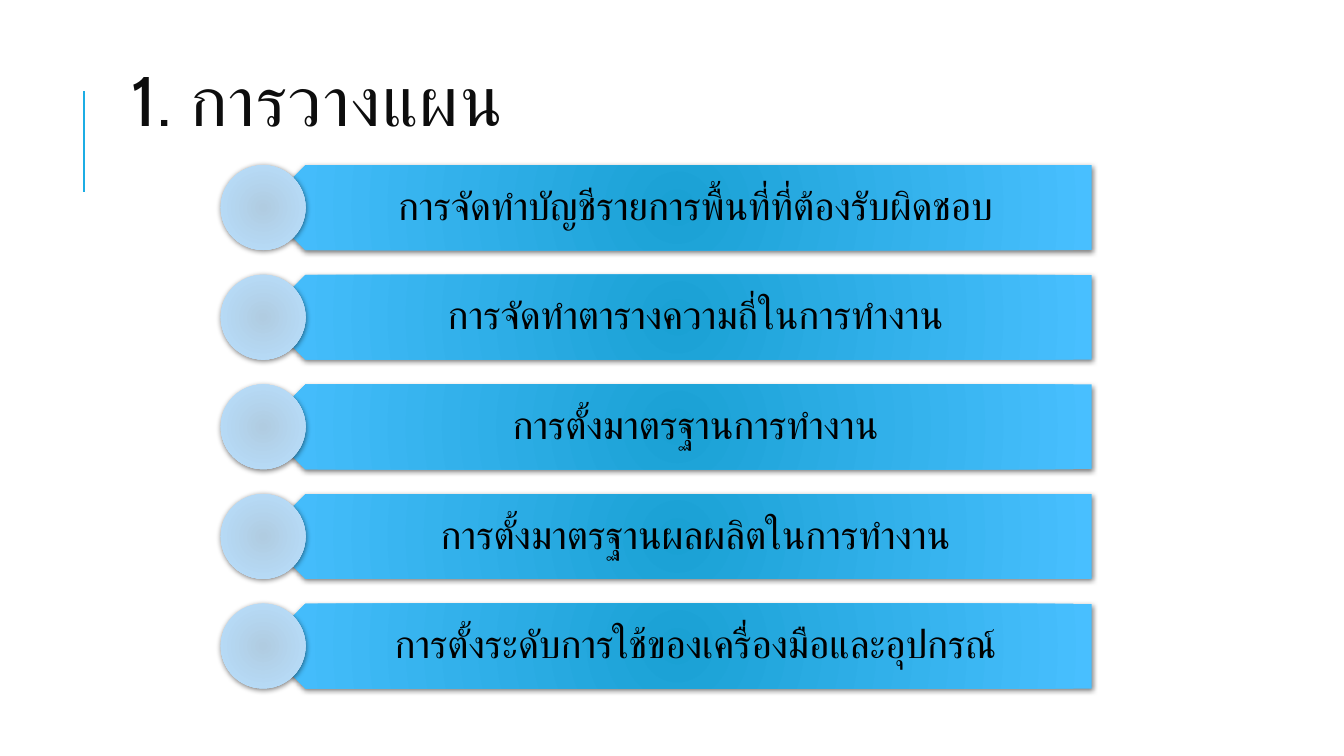
"""Build the planning slide: a title and five labelled arrow bars."""
from lxml.etree import SubElement
from pptx import Presentation
from pptx.dml.color import RGBColor
from pptx.enum.shapes import MSO_CONNECTOR, MSO_SHAPE
from pptx.enum.text import MSO_ANCHOR, PP_ALIGN
from pptx.oxml.ns import qn
from pptx.util import Pt

ACCENT = RGBColor(0x1C, 0xAD, 0xE4)
TITLE = RGBColor(0x0D, 0x0D, 0x0D)
BLACK = RGBColor(0, 0, 0)
BAR = (RGBColor(0x1A, 0xA1, 0xD4), RGBColor(0x48, 0xBF, 0xFF))
DOT = (RGBColor(0xB0, 0xCC, 0xE1), RGBColor(0xB9, 0xE0, 0xFF))

STEPS = [
    "การจัดทำบัญชีรายการพื้นที่ที่ต้องรับผิดชอบ",
    "การจัดทำตารางความถี่ในการทำงาน",
    "การตั้งมาตรฐานการทำงาน",
    "การตั้งมาตรฐานผลผลิตในการทำงาน",
    "การตั้งระดับการใช้ของเครื่องมือและอุปกรณ์",
]
TOP, PITCH, HEIGHT = 118, 78.3, 60.6


def add_glow_shape(kind, left, top, width, colors):
    sp = s.shapes.add_shape(kind, Pt(left), Pt(top), Pt(width), Pt(HEIGHT))
    sp.line.fill.background()
    sp.fill.gradient()
    for stop, color in zip(sp.fill.gradient_stops, colors):
        stop.color.rgb = color
    grad = sp._element.spPr.find(qn("a:gradFill"))
    grad.remove(grad.find(qn("a:lin")))
    path = SubElement(grad, qn("a:path"), {"path": "circle"})
    SubElement(path, qn("a:fillToRect"), dict.fromkeys("ltrb", "100000"))
    sp.shadow.inherit = False
    effects = sp._element.spPr.find(qn("a:effectLst"))
    shadow = SubElement(effects, qn("a:outerShdw"), {
        "blurRad": str(Pt(4)), "dist": str(Pt(1)), "dir": "5400000", "rotWithShape": "0"})
    black = SubElement(shadow, qn("a:srgbClr"), {"val": "000000"})
    SubElement(black, qn("a:alpha"), {"val": "50000"})
    return sp


def set_text(tf, text, spacing, align, font):
    tf.word_wrap = True
    tf.vertical_anchor = MSO_ANCHOR.MIDDLE
    p = tf.paragraphs[0]
    p.alignment, p.line_spacing = align, spacing
    r = p.add_run()
    r.text = text
    color = font["color"]
    for name in ("name", "size"):
        setattr(r.font, name, font[name])
    r.font.color.rgb = color
    SubElement(r.font._element, qn("a:cs"), {"typeface": font["name"]})
    return r


prs = Presentation()
prs.slide_width, prs.slide_height = Pt(960), Pt(540)
s = prs.slides.add_slide(prs.slide_layouts[5])

rule = s.shapes.add_connector(MSO_CONNECTOR.STRAIGHT, Pt(60), Pt(136.8), Pt(60), Pt(64.8))
rule.line.color.rgb = ACCENT
rule.line.width = Pt(1.5)
SubElement(rule._element.spPr, qn("a:effectLst"))

title = s.shapes.title
for name, value in {"left": 86.4, "top": 17.3, "width": 765.4, "height": 118}.items():
    setattr(title, name, Pt(value))
r = set_text(title.text_frame, "1. การวางแผน", 0.8, PP_ALIGN.LEFT,
             {"name": "Cabin", "size": Pt(50), "color": TITLE})
r.font._element.set("spc", "100")

for i, step in enumerate(STEPS):
    top = TOP + i * PITCH
    bar = add_glow_shape(MSO_SHAPE.PENTAGON, 187.9, top, 591.8, BAR)
    bar.rotation = 180
    tb = s.shapes.add_textbox(Pt(203), Pt(top), Pt(576.7), Pt(HEIGHT))
    tf = tb.text_frame
    for side, value in {"left": 26.6, "top": 8.6, "right": 15.8, "bottom": 8.6}.items():
        setattr(tf, f"margin_{side}", Pt(value))
    set_text(tf, step, 0.9, PP_ALIGN.CENTER,
             {"name": "Calibri", "size": Pt(28), "color": BLACK})
    add_glow_shape(MSO_SHAPE.OVAL, 157.7, top, HEIGHT, DOT)

prs.save("out.pptx")
